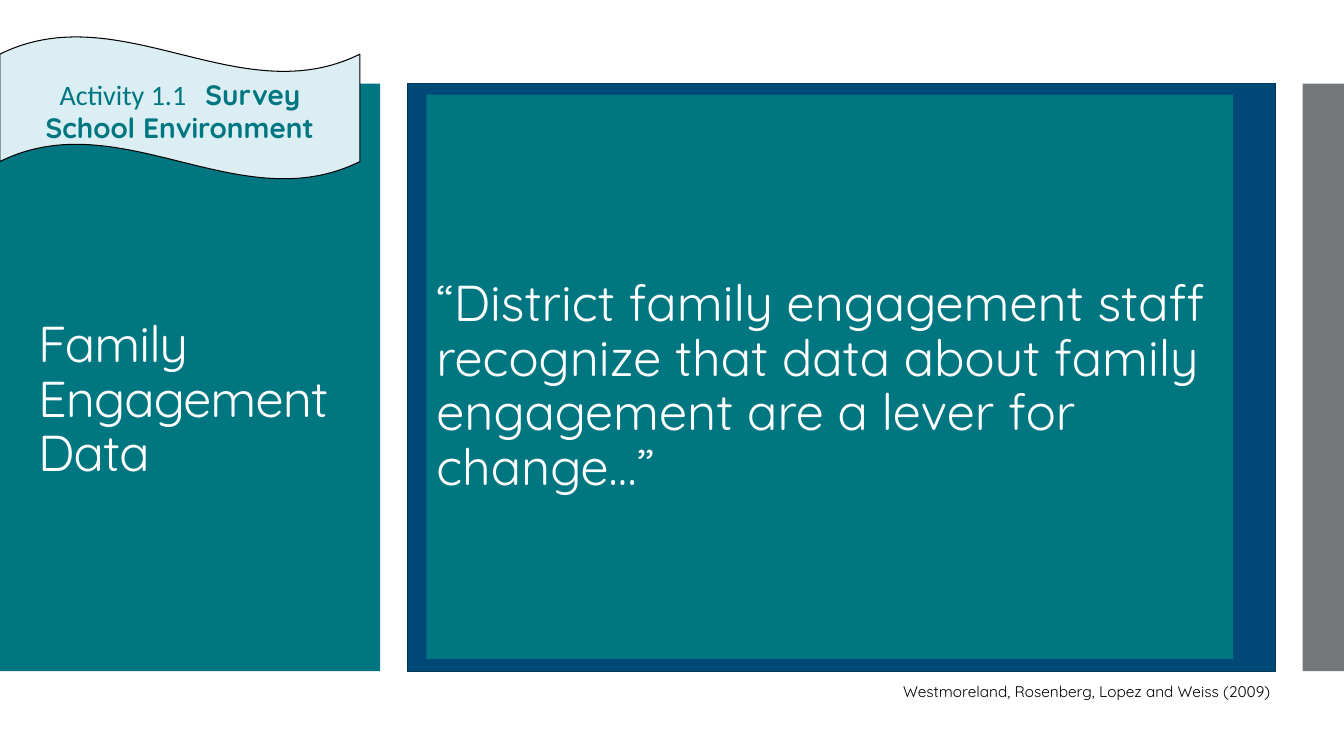
"""Builds the Family Engagement Data quotation slide."""
import pptx
import pptx.util
import pptx.dml.color
import pptx.enum.shapes
import pptx.enum.text

Inches = pptx.util.Inches
Pt = pptx.util.Pt
RGBColor = pptx.dml.color.RGBColor
Shape = pptx.enum.shapes.MSO_SHAPE
Anchor = pptx.enum.text.MSO_ANCHOR
Align = pptx.enum.text.PP_ALIGN

TEAL = RGBColor(0x00, 0x76, 0x81)
NAVY = RGBColor(0x00, 0x49, 0x76)
NAVY_EDGE = RGBColor(0x00, 0x36, 0x57)
GRAY = RGBColor(0x75, 0x78, 0x7B)
PALE_BLUE = RGBColor(0xDA, 0xEE, 0xF3)
WHITE = RGBColor(0xFF, 0xFF, 0xFF)
BLACK = RGBColor(0x00, 0x00, 0x00)


def add_text(paragraph, text, *, size, color, font="Quicksand", bold=False, tracking=0):
    """Append a formatted run; tracking is in points."""
    run = paragraph.add_run()
    run.text = text
    run.font.name = font
    run.font.size = Pt(size)
    run.font.bold = bold
    run.font.color.rgb = color
    if tracking:
        run._r.get_or_add_rPr().set("spc", str(round(tracking * 100)))


class QuoteSlide:
    """Holds the slide and its house style."""

    def __init__(self, presentation):
        self.slide = presentation.slides.add_slide(presentation.slide_layouts[6])

    def panel(self, left, top, width, height, fill, kind=Shape.RECTANGLE, edge=None, edge_width=0.75):
        """Add a filled shape, with an outline when an edge colour is given."""
        panel = self.slide.shapes.add_shape(
            kind, Inches(left), Inches(top), Inches(width), Inches(height))
        panel.shadow.inherit = False
        panel.fill.solid()
        panel.fill.fore_color.rgb = fill
        if edge is None:
            panel.line.fill.background()
        else:
            panel.line.color.rgb = edge
            panel.line.width = Pt(edge_width)
        return panel

    def textbox(self, left, top, width, height):
        """Add an empty text box."""
        return self.slide.shapes.add_textbox(
            Inches(left), Inches(top), Inches(width), Inches(height))

    def frame(self, holder, anchor=Anchor.TOP, align=Align.LEFT, top=0.05, bottom=0.05, spacing=None):
        """Set up the wrapping text of a shape and return its first paragraph."""
        frame = holder.text_frame
        frame.word_wrap = True
        frame.vertical_anchor = anchor
        frame.margin_top = Inches(top)
        frame.margin_bottom = Inches(bottom)
        paragraph = frame.paragraphs[0]
        paragraph.alignment = align
        if spacing:
            paragraph.line_spacing = spacing
        return paragraph


def main():
    """Lay out the slide and save it."""
    presentation = pptx.Presentation()
    presentation.slide_width = Inches(13.33)
    presentation.slide_height = Inches(7.5)
    page = QuoteSlide(presentation)

    band_top, band_height = 0.83, 5.83
    page.panel(4.04, band_top, 8.61, band_height, NAVY, edge=NAVY_EDGE, edge_width=0.85)
    page.panel(0, band_top, 3.77, band_height, TEAL)
    page.panel(12.92, band_top, 0.41, band_height, GRAY)

    title = page.frame(page.textbox(0.28, 2.24, 3.42, 4.03),
                       Anchor.MIDDLE, bottom=0.6, spacing=0.9)
    add_text(title, "Family Engagement Data", size=36, color=WHITE, tracking=-0.6)

    quote = page.frame(page.panel(4.23, 0.94, 8, 5.6, TEAL),
                       Anchor.MIDDLE, top=0.25, spacing=0.9)
    add_text(quote, "“District family engagement staff recognize that data about "
             "family engagement are a lever for change…”", size=36, color=WHITE)

    citation = page.frame(page.textbox(8.86, 6.72, 4.17, 0.29))
    add_text(citation, "Westmoreland, Rosenberg, Lopez and Weiss (2009)", size=11, color=BLACK)

    banner = page.panel(0, 0.36, 3.57, 1.42, PALE_BLUE, Shape.WAVE, edge=BLACK)
    activity = page.frame(banner, align=Align.CENTER, bottom=0)
    add_text(activity, "Activity 1.1", size=20, color=TEAL, font="Calibri")
    add_text(activity, " ", size=20, color=TEAL, font="Calibri", tracking=9)
    add_text(activity, "Survey", size=20, color=TEAL, bold=True)
    subject = banner.text_frame.add_paragraph()
    subject.alignment = Align.CENTER
    add_text(subject, "School Environment", size=20, color=TEAL, bold=True)

    presentation.save("out.pptx")


if __name__ == "__main__":
    main()
